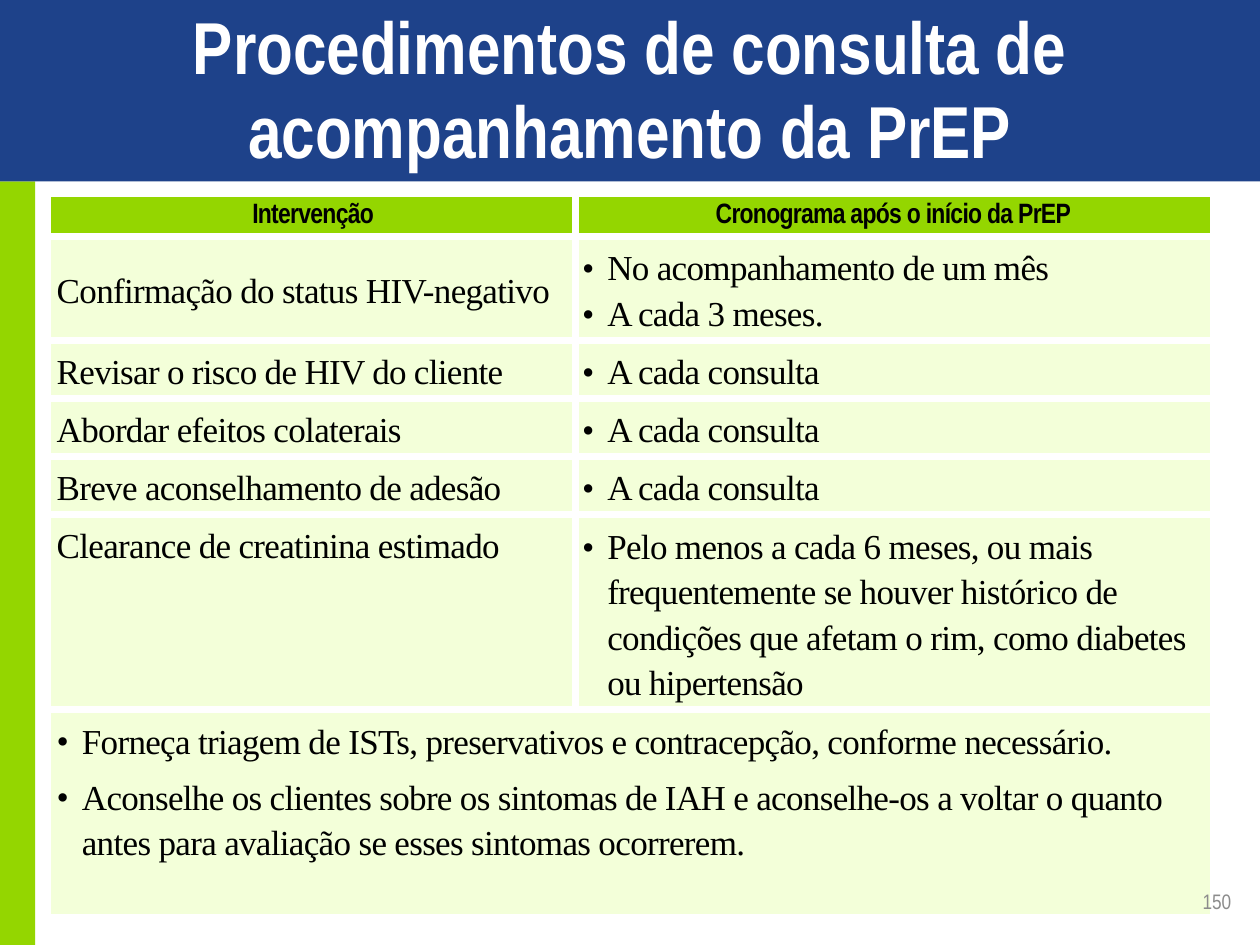
import pptx
import pptx.util
import pptx.dml.color
import pptx.enum.shapes
import pptx.enum.text
import pptx.oxml
import pptx.oxml.ns
from lxml import etree

Inches, Pt = pptx.util.Inches, pptx.util.Pt
ALIGN, ANCHOR = pptx.enum.text.PP_ALIGN, pptx.enum.text.MSO_ANCHOR
SANS, SERIF = "Arial Narrow", "Times New Roman"
BLUE, GREEN, PALE, WHITE, BLACK, GRAY = "1E428A", "94D600", "F3FFD9", "FFFFFF", "000000", "8C8C8C"

WIDTH, HEIGHT = 10, 7.5
BANNER = 1.44
TITLE = "Procedimentos de consulta de acompanhamento da PrEP"
HEADERS = ["Intervenção", "Cronograma após o início da PrEP"]
EVERY_VISIT = ["A cada consulta"]
ROWS = [
    ("Confirmação do status HIV-negativo", ["No acompanhamento de um mês", "A cada 3 meses."]),
    ("Revisar o risco de HIV do cliente", EVERY_VISIT),
    ("Abordar efeitos colaterais", EVERY_VISIT),
    ("Breve aconselhamento de adesão", EVERY_VISIT),
    ("Clearance de creatinina estimado", [
        "Pelo menos a cada 6 meses, ou mais frequentemente se houver histórico de "
        "condições que afetam o rim, como diabetes ou hipertensão"]),
]
NOTES = [
    "Forneça triagem de ISTs, preservativos e contracepção, conforme necessário.",
    "Aconselhe os clientes sobre os sintomas de IAH e aconselhe-os a voltar o quanto "
    "antes para avaliação se esses sintomas ocorrerem.",
]
COLS = [4.17, 5.04]
ROW_HEIGHTS = [0.31, 0.82, 0.46, 0.46, 0.46, 1.55, 1.63]


def rgb(color):
    return pptx.dml.color.RGBColor.from_string(color)


def add_bar(s, left, top, width, height, color):
    sp = s.shapes.add_shape(pptx.enum.shapes.MSO_SHAPE.RECTANGLE,
                            *map(Inches, (left, top, width, height)))
    sp.shadow.inherit = False
    sp.fill.solid()
    sp.fill.fore_color.rgb = rgb(color)
    sp.line.fill.background()


def style(p, font, size, color, bold=False, align=ALIGN.LEFT, spacing=None):
    p.alignment = align
    if spacing:
        p.line_spacing = Pt(spacing)
    for r in p.runs:
        r.font.name, r.font.size, r.font.bold = font, Pt(size), bold
        r.font.color.rgb = rgb(color)


def add_text(s, box, text, *args, **kwargs):
    tf = s.shapes.add_textbox(*map(Inches, box)).text_frame
    tf.word_wrap = True
    tf.vertical_anchor = ANCHOR.MIDDLE
    tf.text = text
    style(tf.paragraphs[0], *args, **kwargs)


def add_bullet(p):
    pPr = p._p.get_or_add_pPr()
    pPr.set("marL", str(Inches(0.2)))
    pPr.set("indent", str(-Inches(0.2)))
    etree.SubElement(pPr, pptx.oxml.ns.qn("a:buFont")).set("typeface", SERIF)
    etree.SubElement(pPr, pptx.oxml.ns.qn("a:buChar")).set("char", "•")


def add_borders(cell, sides):
    tcPr = cell._tc.get_or_add_tcPr()
    for i, side in enumerate(sides):
        tcPr.insert(i, pptx.oxml.parse_xml(
            f'<a:ln{side} {pptx.oxml.ns.nsdecls("a")} w="{Pt(4.5)}"><a:solidFill>'
            f'<a:srgbClr val="{WHITE}"/></a:solidFill></a:ln{side}>'))


def fill_cell(cell, lines, header=False, bullets=False, anchor=ANCHOR.MIDDLE, after=0):
    cell.fill.solid()
    cell.fill.fore_color.rgb = rgb(GREEN if header else PALE)
    cell.vertical_anchor = anchor
    cell.margin_left = cell.margin_right = cell.margin_top = Inches(0.05)
    cell.margin_bottom = Inches(0 if header else 0.05)
    cell.text_frame.text = "\n".join(lines)
    for p in cell.text_frame.paragraphs:
        if bullets:
            add_bullet(p)
        if header:
            style(p, SANS, 16, BLACK, True, ALIGN.CENTER)
        else:
            style(p, SERIF, 20, BLACK, spacing=26)
        for r in p.runs:
            r.font._element.set("spc", "-40")
    if after:
        cell.text_frame.paragraphs[0].space_after = Pt(after)


def add_schedule(s):
    last = len(ROW_HEIGHTS) - 1
    frame = s.shapes.add_table(last + 1, len(COLS), Inches(0.4), Inches(1.56),
                               Inches(sum(COLS)), Inches(sum(ROW_HEIGHTS)))
    table = frame.table
    for col, width in zip(table.columns, COLS):
        col.width = Inches(width)
    for row, height in zip(table.rows, ROW_HEIGHTS):
        row.height = Inches(height)
    for c, text in enumerate(HEADERS):
        fill_cell(table.cell(0, c), [text], header=True, anchor=ANCHOR.TOP)
    for i, (name, schedule) in enumerate(ROWS, 1):
        fill_cell(table.cell(i, 0), [name], anchor=ANCHOR.TOP if i == len(ROWS) else ANCHOR.MIDDLE)
        fill_cell(table.cell(i, 1), schedule, bullets=True)
    table.cell(last, 0).merge(table.cell(last, 1))
    fill_cell(table.cell(last, 0), NOTES, bullets=True, anchor=ANCHOR.TOP, after=6)
    for i in range(last + 1):
        for c in range(len(COLS)):
            sides = [("L" if c else "R")] if i < last else []
            sides += ["T"] if i else []
            sides += ["B"] if i < last else []
            add_borders(table.cell(i, c), sides)


def main():
    prs = pptx.Presentation()
    prs.slide_width, prs.slide_height = Inches(WIDTH), Inches(HEIGHT)
    s = prs.slides.add_slide(prs.slide_layouts[6])
    add_bar(s, 0, BANNER, 0.28, HEIGHT - BANNER, GREEN)
    add_bar(s, 0, 0, WIDTH, BANNER, BLUE)
    add_text(s, (0.5, 0.24, 9, 0.94), TITLE, SANS, 42, WHITE, True, ALIGN.CENTER, 48)
    add_schedule(s)
    add_text(s, (7.54, 6.95, 2.33, 0.4), "150", SANS, 12, GRAY, align=ALIGN.RIGHT)
    prs.save("out.pptx")


if __name__ == "__main__":
    main()
